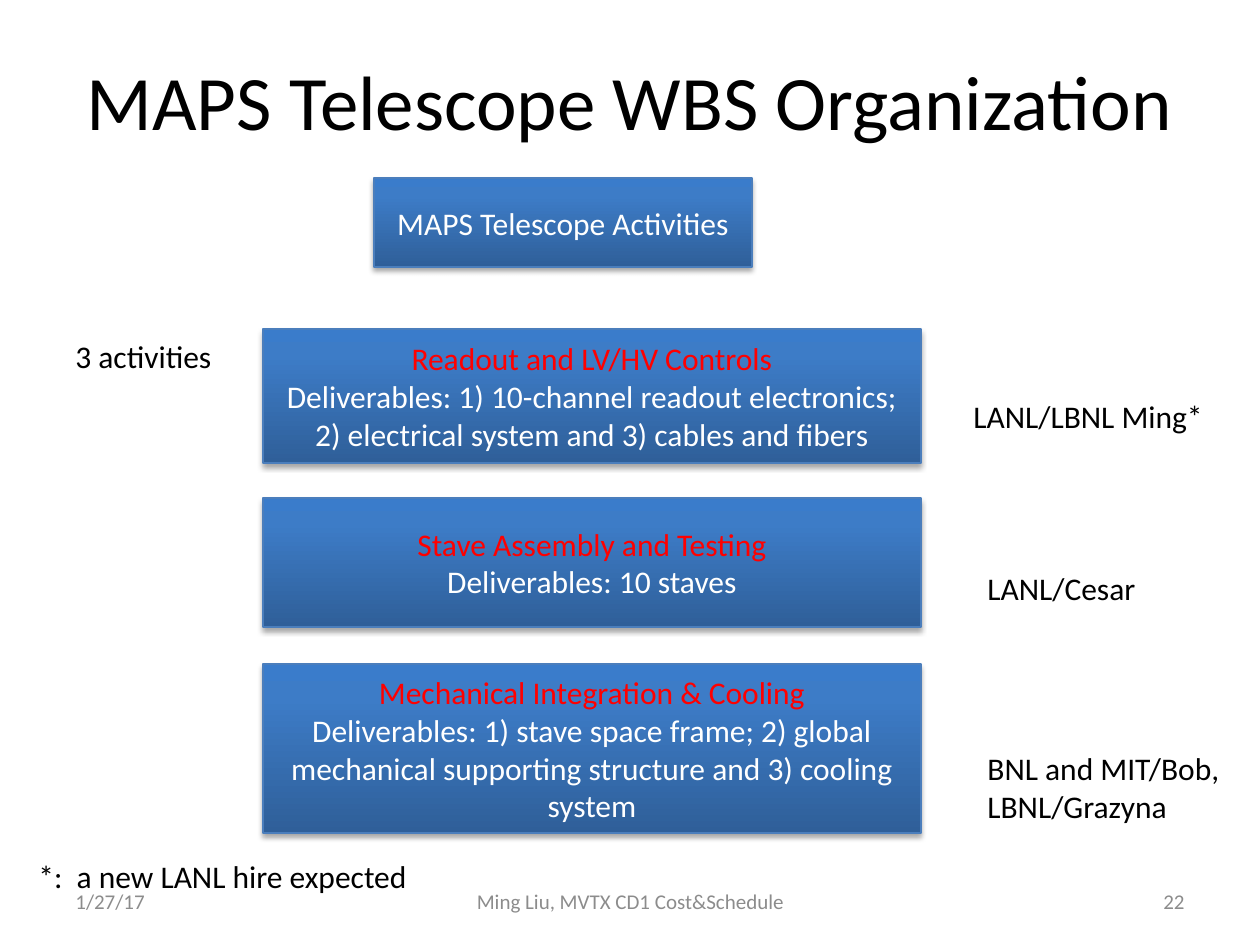
from dataclasses import dataclass

from lxml.etree import SubElement
from pptx import Presentation
from pptx.dml.color import RGBColor
from pptx.enum.shapes import MSO_SHAPE
from pptx.enum.text import MSO_ANCHOR, PP_ALIGN
from pptx.oxml.ns import qn
from pptx.util import Emu, Pt

PX_PER_INCH = 126
FONT = "Calibri"
BLACK, WHITE, RED, GREY = "000000", "FFFFFF", "FF0000", "8C8C8C"
BORDER = "4B7EBC"
GRADIENT = ((0, "2F5F99"), (80, "3D7CC7"), (100, "3A7CCB"))


@dataclass
class Line:
    text: str
    color: str = BLACK


@dataclass
class Box:
    x: int
    y: int
    w: int
    h: int
    lines: list[Line]


@dataclass
class Label(Box):
    size: int = 18
    align: PP_ALIGN = PP_ALIGN.LEFT
    anchor: MSO_ANCHOR = MSO_ANCHOR.TOP
    wrap: bool = False


def px(n: int) -> Emu:
    return Emu(round(n * 914400 / PX_PER_INCH))


def rgb(color: str) -> RGBColor:
    return RGBColor.from_string(color)


def write(tf, lines: list[Line], size: int, align: PP_ALIGN) -> None:
    for i, line in enumerate(lines):
        p = tf.paragraphs[0] if i == 0 else tf.add_paragraph()
        p.text = line.text
        p.alignment = align
        p.font.name = FONT
        p.font.size = Pt(size)
        p.font.color.rgb = rgb(line.color)


def add_label(s, label: Label) -> None:
    sp = s.shapes.add_textbox(px(label.x), px(label.y), px(label.w), px(label.h))
    tf = sp.text_frame
    tf.word_wrap = label.wrap
    tf.vertical_anchor = label.anchor
    write(tf, label.lines, label.size, label.align)


def shade(sp) -> None:
    """Give a shape the vertical blue gradient and a soft shadow below."""
    sp.fill.gradient()
    sp.fill.gradient_angle = 90
    sp.shadow.inherit = False
    sp_pr = sp._element.spPr

    stops = sp_pr.find(qn("a:gradFill")).find(qn("a:gsLst"))
    for stop in list(stops):
        stops.remove(stop)
    for percent, color in GRADIENT:
        stop = SubElement(stops, qn("a:gs"), pos=str(percent * 1000))
        SubElement(stop, qn("a:srgbClr"), val=color)

    shadow = SubElement(sp_pr.find(qn("a:effectLst")), qn("a:outerShdw"),
                        blurRad=str(Pt(3.1)), dist=str(Pt(1.8)),
                        dir="5400000", rotWithShape="0")
    color = SubElement(shadow, qn("a:srgbClr"), val=BLACK)
    SubElement(color, qn("a:alpha"), val="35000")


def add_box(s, box: Box) -> None:
    sp = s.shapes.add_shape(MSO_SHAPE.RECTANGLE,
                            px(box.x), px(box.y), px(box.w), px(box.h))
    sp.line.color.rgb = rgb(BORDER)
    sp.line.width = Pt(0.75)
    shade(sp)
    tf = sp.text_frame
    tf.word_wrap = True
    tf.vertical_anchor = MSO_ANCHOR.MIDDLE
    write(tf, box.lines, 18, PP_ALIGN.CENTER)


def activity(y: int, h: int, name: str, deliverables: str) -> Box:
    return Box(263, y, 658, h, [Line(name, RED),
                                Line(f"Deliverables: {deliverables}", WHITE)])


def footer(x: int, w: int, text: str, align: PP_ALIGN) -> Label:
    return Label(x, 876, w, 50, [Line(text, GREY)], 12, align,
                 MSO_ANCHOR.MIDDLE, True)


BOXES = [
    Box(374, 178, 378, 89, [Line("MAPS Telescope Activities", WHITE)]),
    activity(329, 134, "Readout and LV/HV Controls",
             "1) 10-channel readout electronics; "
             "2) electrical system and 3) cables and fibers"),
    activity(498, 129, "Stave Assembly and Testing", "10 staves"),
    activity(664, 169, "Mechanical Integration & Cooling",
             "1) stave space frame; 2) global mechanical supporting "
             "structure and 3) cooling system"),
]

LABELS = [
    Label(63, 21, 1134, 158, [Line("MAPS Telescope WBS Organization")], 44,
          PP_ALIGN.CENTER, MSO_ANCHOR.MIDDLE, True),
    Label(63, 331, 164, 50, [Line("3 activities")]),
    Label(961, 391, 257, 50, [Line("LANL/LBNL Ming*")]),
    Label(975, 563, 175, 50, [Line("LANL/Cesar")]),
    Label(975, 743, 261, 89, [Line("BNL and MIT/Bob,"), Line("LBNL/Grazyna")]),
    Label(26, 851, 399, 50, [Line("*:  a new LANL hire expected")]),
    footer(63, 294, "1/27/17", PP_ALIGN.LEFT),
    footer(431, 399, "Ming Liu, MVTX CD1 Cost&Schedule", PP_ALIGN.CENTER),
    footer(903, 294, "22", PP_ALIGN.RIGHT),
]


def main() -> None:
    prs = Presentation()
    prs.slide_width, prs.slide_height = px(1260), px(945)
    s = prs.slides.add_slide(prs.slide_layouts[6])
    for box in BOXES:
        add_box(s, box)
    for label in LABELS:
        add_label(s, label)
    prs.save("out.pptx")


if __name__ == "__main__":
    main()
